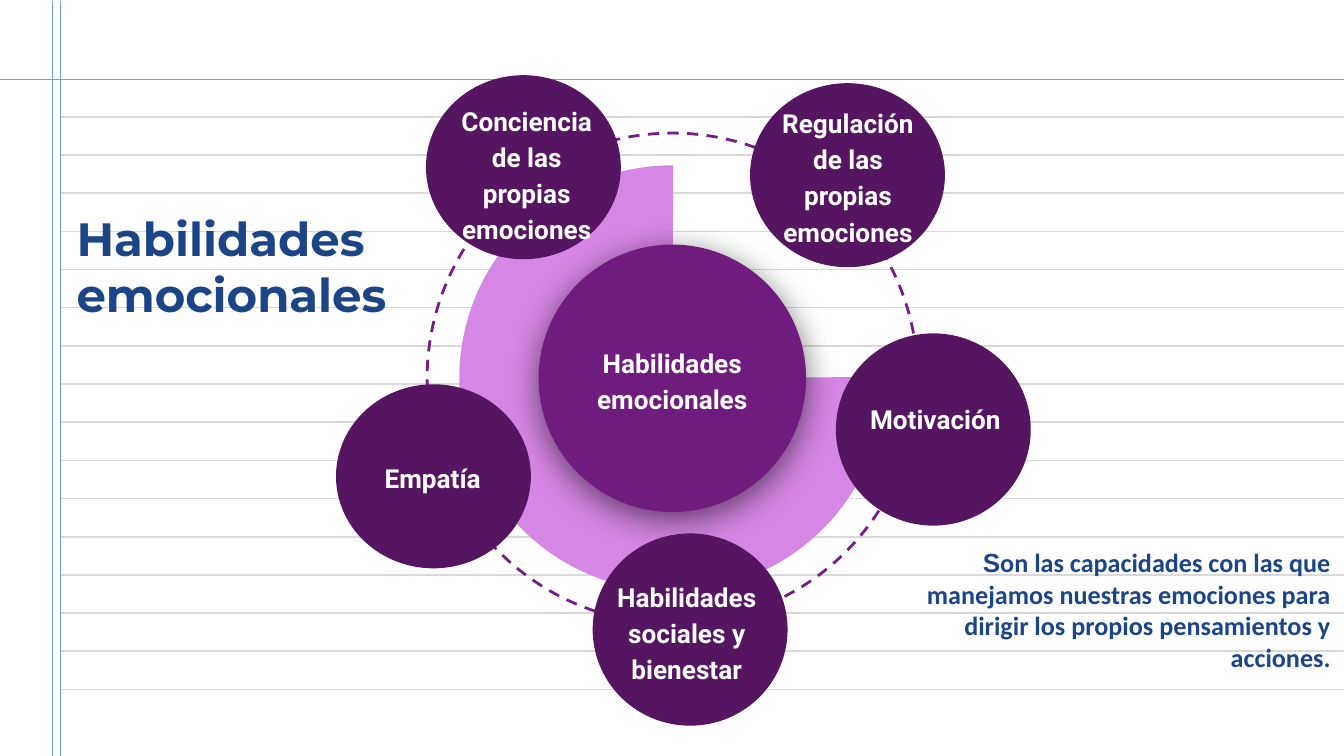
import pptx
import pptx.dml.color
import pptx.enum.dml
import pptx.enum.shapes
import pptx.enum.text
import pptx.oxml
import pptx.oxml.ns
import pptx.util

Pt = pptx.util.Pt
RGBColor = pptx.dml.color.RGBColor
SHAPE = pptx.enum.shapes.MSO_SHAPE
ALIGN = pptx.enum.text.PP_ALIGN
ANCHOR = pptx.enum.text.MSO_ANCHOR

RULE_GRAY = RGBColor(0xD9, 0xD9, 0xD9)
MARGIN_BLUE = RGBColor(0x6D, 0x9E, 0xEB)
TEXT_BLUE = RGBColor(0x1C, 0x45, 0x87)
RING_PURPLE = RGBColor(0x76, 0x1E, 0x86)
SECTOR_LILAC = RGBColor(0xD6, 0x86, 0xE4)
HUB_PURPLE = RGBColor(0x70, 0x1C, 0x7F)
SKILL_PURPLE = RGBColor(0x55, 0x15, 0x61)
WHITE = RGBColor(0xFF, 0xFF, 0xFF)

SLIDE_W, SLIDE_H = 720, 405
INSET = 7.2

# Circle left, top, height; label left, top, width, height; wording
SKILL_W = 104.4
SKILLS = [
    (48.2, 0, 98.6, 58.3, 13, 87.8, 78.5, "Conciencia de las propias emociones"),
    (137.5, 245.5, 103, 143.3, 262.1, 89.3, 70.6, "Habilidades sociales y bienestar"),
    (0, 165.6, 98.6, 14.4, 180.7, 74.9, 67.7, "Empatía"),
    (267.8, 138.3, 103, 276.5, 148.3, 89.3, 69.8, "Motivación"),
    (221.8, 4.3, 98.6, 227.5, 18.7, 93.6, 69.8, "Regulación de las propias emociones"),
]


def add_effects(shape, content=""):
    shape._element.spPr.append(pptx.oxml.parse_xml(
        f'<a:effectLst {pptx.oxml.ns.nsdecls("a")}>{content}</a:effectLst>'))


def add_rule(slide, x1, y1, x2, y2, color, weight):
    rule = slide.shapes.add_connector(
        pptx.enum.shapes.MSO_CONNECTOR.STRAIGHT, Pt(x1), Pt(y1), Pt(x2), Pt(y2))
    rule.line.color.rgb = color
    rule.line.width = Pt(weight)
    add_effects(rule)


def add_disc(slide, kind, left, top, width, height, fill=None):
    disc = slide.shapes.add_shape(kind, Pt(left), Pt(top), Pt(width), Pt(height))
    disc.shadow.inherit = False
    disc.line.fill.background()
    if fill is None:
        disc.fill.background()
    else:
        disc.fill.solid()
        disc.fill.fore_color.rgb = fill
    return disc


def add_text(slide, box, pieces, size, color, align, inset=INSET,
             anchor=ANCHOR.TOP, spacing=1.0):
    """Place one bold paragraph made of (wording, font) pieces."""
    left, top, width, height = box
    frame = slide.shapes.add_textbox(Pt(left), Pt(top), Pt(width), Pt(height)).text_frame
    frame.word_wrap = True
    frame.vertical_anchor = anchor
    frame.margin_left = frame.margin_right = Pt(inset)
    frame.margin_top = frame.margin_bottom = Pt(inset)
    paragraph = frame.paragraphs[0]
    paragraph.alignment = align
    paragraph.line_spacing = spacing
    for wording, font in pieces:
        run = paragraph.add_run()
        run.text = wording
        run.font.name = font
        run.font.size = Pt(size)
        run.font.bold = True
        run.font.color.rgb = color


def add_label(slide, box, wording):
    add_text(slide, box, [(wording, "Roboto")], 14, WHITE, ALIGN.CENTER,
             anchor=ANCHOR.MIDDLE, spacing=1.15)


def draw_notebook(slide, left, top, width, height):
    # Ruled lines
    margin_x = left + 32.4
    for row in range(16):
        y = top + 62.6 + row * 20.45
        add_rule(slide, margin_x, y, left + width, y, RULE_GRAY, 0.86)
    # Double margin and header line
    for x in (left + 28, margin_x):
        add_rule(slide, x, top + 0.7, x, top + height, MARGIN_BLUE, 0.75)
    add_rule(slide, left - 5, top + 42.5, left + width + 5, top + 42.5, MARGIN_BLUE, 0.75)


def draw_wheel(slide, left, top):
    center_x, center_y = left + 180.2, top + 162.4

    def add_centered(kind, size, fill=None):
        return add_disc(slide, kind, center_x - size / 2, center_y - size / 2,
                        size, size, fill)

    # Dashed ring
    ring = add_centered(SHAPE.OVAL, 262.8)
    ring.rotation = 270
    ring.line.color.rgb = RING_PURPLE
    ring.line.width = Pt(1.5)
    ring.line.dash_style = pptx.enum.dml.MSO_LINE.DASH

    # Three-quarter sector
    sector = add_centered(SHAPE.PIE, 228.2, SECTOR_LILAC)
    sector.adjustments[0] = 215.771
    sector.adjustments[1] = 162.149

    # Hub with soft shadow
    hub = add_centered(SHAPE.OVAL, 143.3, HUB_PURPLE)
    hub.shadow.inherit = True
    add_effects(hub, f'<a:outerShdw blurRad="{Pt(18)}" dist="{Pt(4)}" dir="5400000" '
                     'algn="bl" rotWithShape="0"><a:srgbClr val="000000">'
                     '<a:alpha val="55000"/></a:srgbClr></a:outerShdw>')
    add_label(slide, (center_x - 52.9, center_y - 32.4, 105.8, 64.8),
              "Habilidades emocionales")

    # Skills around the hub
    for x, y, height, label_x, label_y, label_w, label_h, wording in SKILLS:
        add_disc(slide, SHAPE.OVAL, left + x, top + y, SKILL_W, height, SKILL_PURPLE)
        add_label(slide, (left + label_x, top + label_y, label_w, label_h), wording)


def draw_title(slide, box):
    add_text(slide, box, [("Habilidades emocionales", "Montserrat")], 25,
             TEXT_BLUE, ALIGN.LEFT, inset=0)


def draw_definition(slide, box):
    pieces = [("S", "Arial"),
              ("on las capacidades con las que manejamos nuestras emociones "
               "para dirigir los propios pensamientos y acciones.", "Calibri")]
    add_text(slide, box, pieces, 14, TEXT_BLUE, ALIGN.RIGHT)


def main():
    deck = pptx.Presentation()
    deck.slide_width, deck.slide_height = Pt(SLIDE_W), Pt(SLIDE_H)
    slide = deck.slides.add_slide(deck.slide_layouts[6])
    draw_notebook(slide, 0, 0, SLIDE_W, SLIDE_H)
    draw_wheel(slide, 180, 40.3)
    draw_title(slide, (41, 112.3, 198, 66.2))
    draw_definition(slide, (483.8, 285.8, 236.2, 82.1))
    deck.save("out.pptx")


if __name__ == "__main__":
    main()
